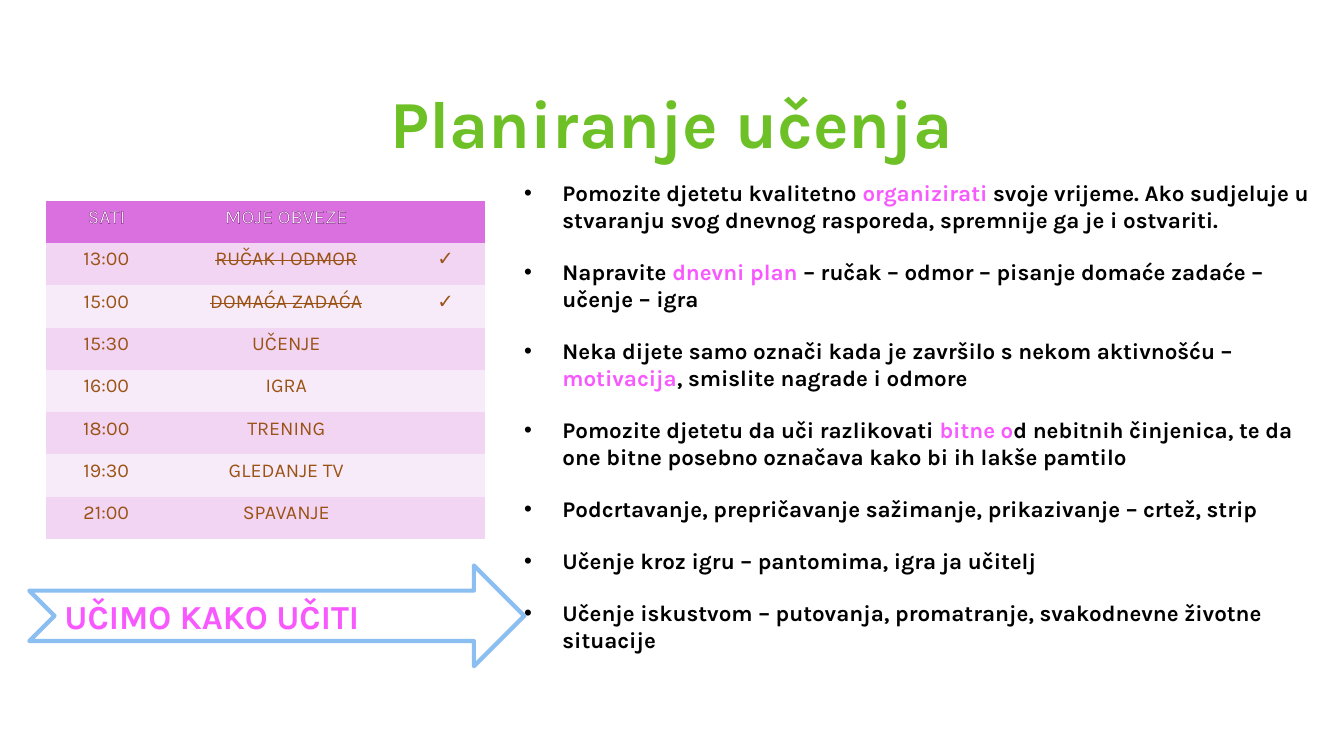
from pptx import Presentation
from pptx.dml.color import RGBColor
from pptx.enum.shapes import MSO_SHAPE
from pptx.enum.text import MSO_ANCHOR, MSO_AUTO_SIZE, PP_ALIGN
from pptx.oxml import parse_xml
from pptx.oxml.ns import nsdecls, qn
from pptx.util import Inches, Pt

TITLE = "Planiranje učenja"
MOTTO = "UČIMO KAKO UČITI"
HEAD = ("SATI", "MOJE OBVEZE", "")
PLAN = [
    ("13:00", "RUČAK I ODMOR", "✓"),
    ("15:00", "DOMAĆA ZADAĆA", "✓"),
    ("15:30", "UČENJE", ""),
    ("16:00", "IGRA", ""),
    ("18:00", "TRENING", ""),
    ("19:30", "GLEDANJE TV", ""),
    ("21:00", "SPAVANJE", ""),
]
TIPS = [
    ("Pomozite djetetu kvalitetno ", "organizirati",
     " svoje vrijeme. Ako sudjeluje u stvaranju svog dnevnog rasporeda, "
     "spremnije ga je i ostvariti."),
    ("Napravite ", "dnevni plan ",
     "– ručak – odmor – pisanje domaće zadaće – učenje – igra"),
    ("Neka dijete samo označi kada je završilo s nekom aktivnošću – ",
     "motivacija", ", smislite nagrade i odmore"),
    ("Pomozite djetetu da uči razlikovati ", "bitne o",
     "d nebitnih činjenica, te da one bitne posebno označava kako bi ih "
     "lakše pamtilo"),
    ("Podcrtavanje, prepričavanje sažimanje, prikazivanje – crtež, strip",),
    ("Učenje kroz igru – pantomima, igra ja učitelj",),
    ("Učenje iskustvom – putovanja, promatranje, svakodnevne životne "
     "situacije",),
]
FONT = "Karla"
GREEN, PINK, BLACK, BROWN, WHITE = "6DC025", "F759FF", "000000", "9A5315", "FFFFFF"
BAND, EDGE, RIM = ("F8EBF9", "F1D5F3"), "8BBEF1", "841E89"
TOP, COLS, ROW = "DA6FDF", (1.19, 2.38, 0.78), 0.42
NO_GRID = "{2D5ABB26-0587-4C30-8999-92F81FD0307C}"


def hue(code):
    return RGBColor.from_string(code)


def style(font, size, code, bold=False):
    font.name, font.size, font.bold = FONT, Pt(size), bold
    font.color.rgb = hue(code)


def box(left, top, width, height):
    return [Inches(n) for n in (left, top, width, height)]


def add_title(slide):
    title = slide.shapes.title
    title.left, title.top, title.width, title.height = box(1.16, 0.33, 11, 1.33)
    frame = title.text_frame
    frame.text, frame.auto_size = TITLE, MSO_AUTO_SIZE.NONE
    frame.vertical_anchor = MSO_ANCHOR.BOTTOM
    para = frame.paragraphs[0]
    para.alignment = PP_ALIGN.CENTER
    style(para.font, 48, GREEN, True)


def add_tips(slide):
    frame = slide.shapes.add_textbox(*box(5.1, 1.22, 8.01, 5.67)).text_frame
    frame.word_wrap, frame.margin_top = True, Inches(0.56)
    for i, tip in enumerate(TIPS):
        para = frame.add_paragraph() if i else frame.paragraphs[0]
        props = para._p.get_or_add_pPr()
        props.set("marL", str(Inches(0.38)))
        props.set("indent", str(-Inches(0.38)))
        props.append(parse_xml(f'<a:buFont {nsdecls("a")} typeface="Arial"/>'))
        props.append(parse_xml(f'<a:buChar {nsdecls("a")} char="•"/>'))
        if i:
            para.space_before = Pt(18)
        style(para.font, 16, BLACK, True)
        for j, part in enumerate(tip):
            run = para.add_run()
            run.text = part
            if j == 1:
                run.font.color.rgb = hue(PINK)


def add_plan(slide):
    rows = [HEAD] + PLAN
    size = box(0.46, 1.99, sum(COLS), ROW * len(rows))
    table = slide.shapes.add_table(len(rows), len(COLS), *size).table
    table.first_row = table.horz_banding = False
    table._tbl.tblPr.find(qn("a:tableStyleId")).text = NO_GRID
    for col, width in zip(table.columns, COLS):
        col.width = Inches(width)
    for r, row in enumerate(rows):
        table.rows[r].height = Inches(ROW)
        for c, text in enumerate(row):
            cell = table.cell(r, c)
            cell.fill.solid()
            cell.fill.fore_color.rgb = hue(BAND[r % 2] if r else TOP)
            para = cell.text_frame.paragraphs[0]
            para.alignment = PP_ALIGN.CENTER
            style(para.font, 14, BROWN if r else WHITE)
            if not text:
                continue
            run = para.add_run()
            run.text = text
            props = run._r.get_or_add_rPr()
            if r == 0:
                props.append(parse_xml(
                    f'<a:ln {nsdecls("a")} w="{Pt(0.75)}"><a:solidFill>'
                    f'<a:srgbClr val="{RIM}"/></a:solidFill></a:ln>'))
            elif c == 1 and row[2]:
                props.set("strike", "sngStrike")


def add_motto(slide):
    arrow = slide.shapes.add_shape(
        MSO_SHAPE.NOTCHED_RIGHT_ARROW, *box(0.29, 5.61, 4.91, 1))
    arrow.shadow.inherit = False
    arrow.fill.solid()
    arrow.fill.fore_color.rgb = hue(WHITE)
    arrow.line.color.rgb, arrow.line.width = hue(EDGE), Pt(3)
    frame = arrow.text_frame
    frame.text, frame.word_wrap = MOTTO, True
    frame.vertical_anchor = MSO_ANCHOR.MIDDLE
    para = frame.paragraphs[0]
    para.alignment = PP_ALIGN.LEFT
    style(para.font, 24, PINK, True)


def main():
    """Build the study planning slide."""
    deck = Presentation()
    deck.slide_width, deck.slide_height = Inches(13.33), Inches(7.5)
    slide = deck.slides.add_slide(deck.slide_layouts[5])
    for add in (add_title, add_tips, add_plan, add_motto):
        add(slide)
    deck.save("out.pptx")


if __name__ == "__main__":
    main()
